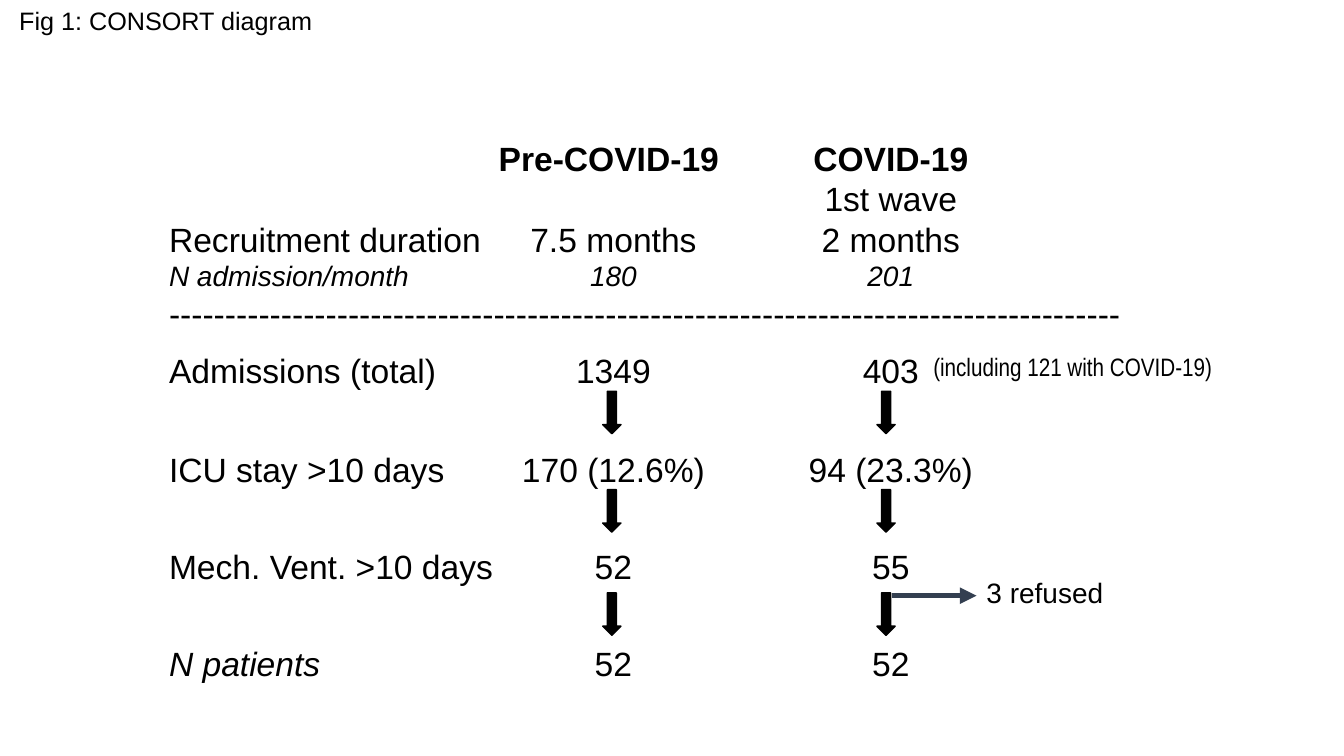
from itertools import product
from lxml import etree
from pptx import Presentation
from pptx.dml.color import RGBColor
from pptx.enum.shapes import MSO_CONNECTOR, MSO_SHAPE
from pptx.enum.text import MSO_ANCHOR, PP_ALIGN
from pptx.oxml.ns import qn
from pptx.util import Cm, Pt

BLACK = RGBColor(0x00, 0x00, 0x00)
SLATE = RGBColor(0x33, 0x3F, 0x50)

TITLE = "Fig 1: CONSORT diagram"
# Each row: cells, size, style, space before (points)
RECRUITMENT = [
    (("", "Pre-COVID-19 ", "COVID-19"), 24, "bold", 0),
    (("", "", "1st wave"), 24, "", 0),
    (("Recruitment duration", "7.5 months", "2 months"), 24, "", 0),
    (("N admission/month", "180", "201"), 20, "italic", 0),
    (("-" * 85,), 24, "", 0),
    (("Admissions (total)", "1349", "403"), 24, "", 12),
]
STAYS = [
    (("ICU stay >10 days", "170 (12.6%)", "94 (23.3%)"), 24, "", 0),
    (("Mech. Vent. >10 days", "52", "55"), 24, "", 41),
]
PATIENTS = [(("N patients", "52", "52"), 24, "italic label", 0)]
COVID_NOTE = [(("(including 121 with COVID-19)",), 18, "", 0)]
REFUSED = [(("3 refused",), 20, "", 0)]

LEFT = 4.01
TABS = (11.2, 18.19)
ARROW_CENTRES = (15.42, 22.33)
ARROW_TOPS = (9.86, 12.34, 14.94)
ARROW_W, ARROW_H = 0.46, 1.07
REFUSED_Y = 15.01


def add_tabs(p):
    tab_list = etree.SubElement(p._p.get_or_add_pPr(), qn("a:tabLst"))
    for pos in TABS:
        etree.SubElement(tab_list, qn("a:tab"), pos=str(Cm(pos)), algn="ctr")


def add_rows(s, rows, x, y, w, h, font="Arial", wrap=True):
    sp = s.shapes.add_textbox(Cm(x), Cm(y), Cm(w), Cm(h))
    tf = sp.text_frame
    tf.word_wrap = wrap
    for i, (cells, size, style, before) in enumerate(rows):
        p = tf.add_paragraph() if i else tf.paragraphs[0]
        if before:
            p.space_before = Pt(before)
        if len(cells) > 1:
            add_tabs(p)
        p.font.name, p.font.size = font, Pt(size)
        p.font.color.rgb = BLACK
        if style == "italic label":
            r = p.add_run()
            r.text, r.font.italic = cells[0], True
            cells = ("",) + cells[1:]
        else:
            p.font.bold = style == "bold"
            p.font.italic = style == "italic"
        p.add_run().text = "\t".join(cells)
    return sp


def add_down_arrow(s, centre, top):
    sp = s.shapes.add_shape(MSO_SHAPE.DOWN_ARROW, Cm(centre - ARROW_W / 2),
                            Cm(top), Cm(ARROW_W), Cm(ARROW_H))
    sp.shadow.inherit = False
    sp.fill.solid()
    sp.fill.fore_color.rgb = BLACK
    sp.line.color.rgb = BLACK
    sp.line.width = Pt(1)


def add_side_arrow(s, x, y, target):
    """Draw an arrow to the middle of the target's left side."""
    line = s.shapes.add_connector(MSO_CONNECTOR.STRAIGHT, Cm(x), Cm(y),
                                  target.left, Cm(y))
    line.end_connect(target, 1)
    line.line.color.rgb = SLATE
    line.line.width = Pt(4)
    etree.SubElement(line.line._get_or_add_ln(), qn("a:tailEnd"), type="triangle")
    etree.SubElement(line._element.spPr, qn("a:effectLst"))


def main():
    prs = Presentation()
    prs.slide_width, prs.slide_height = Cm(33.87), Cm(19.05)
    s = prs.slides.add_slide(prs.slide_layouts[5])

    title = s.shapes.title
    title.left, title.top, title.width, title.height = Cm(0.23), Cm(0), Cm(12), Cm(1.03)
    tf = title.text_frame
    tf.text = TITLE
    tf.vertical_anchor = MSO_ANCHOR.TOP
    p = tf.paragraphs[0]
    p.alignment = PP_ALIGN.LEFT
    p.font.name, p.font.size = "Arial", Pt(18)
    p.font.color.rgb = BLACK

    add_rows(s, RECRUITMENT, LEFT, 3.35, 26.87, 6.68)
    add_rows(s, STAYS, LEFT, 11.18, 22.02, 3.76)
    add_rows(s, COVID_NOTE, 23.27, 8.74, 7.62, 1.03, "Arial Narrow", wrap=False)
    add_rows(s, PATIENTS, LEFT, 16.08, 19.35, 1.28, wrap=False)

    for top, centre in product(ARROW_TOPS, ARROW_CENTRES):
        add_down_arrow(s, centre, top)

    label_h = 1.26
    refused = add_rows(s, REFUSED, 24.61, REFUSED_Y - label_h / 2, 3.48, label_h, wrap=False)
    add_side_arrow(s, 22.48, REFUSED_Y, refused)
    prs.save("out.pptx")


if __name__ == "__main__":
    main()
